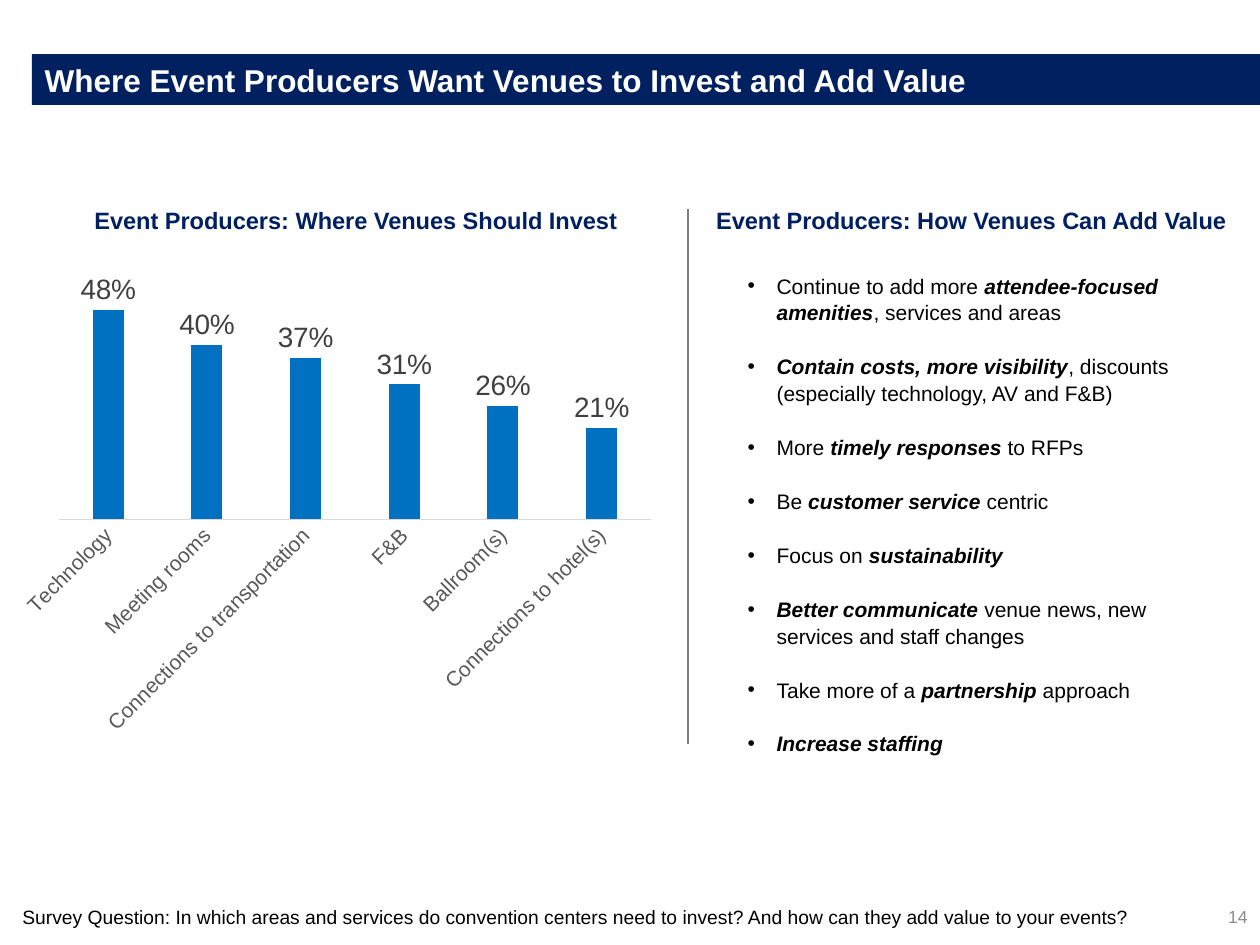
import dataclasses
import lxml.etree
import pptx
import pptx.chart.data
import pptx.dml.color
import pptx.enum.chart
import pptx.enum.shapes
import pptx.enum.text
import pptx.oxml.ns
import pptx.util

SCALE = 914400 / 126
ALIGN = pptx.enum.text.PP_ALIGN
ANCHOR = pptx.enum.text.MSO_ANCHOR


@dataclasses.dataclass(frozen=True)
class Theme:
    """Colours and type sizes of the slide."""
    face: str = "Arial"
    navy: str = "002060"
    white: str = "FFFFFF"
    black: str = "000000"
    blue: str = "0070C0"
    rule: str = "7F7F7F"
    axis: str = "D9D9D9"
    tick: str = "595959"
    label: str = "404040"
    page: str = "8C8C8C"
    title: float = 18
    head: float = 13.5
    body: float = 12
    value: float = 16
    note: float = 11
    foot: float = 10


THEME = Theme()
AREAS = {
    "Technology": 0.48,
    "Meeting rooms": 0.40,
    "Connections to transportation": 0.37,
    "F&B": 0.31,
    "Ballroom(s)": 0.26,
    "Connections to hotel(s)": 0.21,
}
POINTS = [
    [("Continue to add more ", False), ("attendee-focused amenities", True),
     (", services and areas", False)],
    [("Contain costs, more visibility", True),
     (", discounts (especially technology, AV and F&B)", False)],
    [("More ", False), ("timely responses ", True), ("to RFPs", False)],
    [("Be ", False), ("customer service ", True), ("centric", False)],
    [("Focus on ", False), ("sustainability", True)],
    [("Better communicate ", True),
     ("venue news, new services and staff changes", False)],
    [("Take more of a ", False), ("partnership ", True), ("approach", False)],
    [("Increase staffing", True)],
]


def px(num):
    """Turn pixels into EMU."""
    return pptx.util.Emu(round(num * SCALE))


def tint(hue):
    """Turn a hex string into a colour."""
    return pptx.dml.color.RGBColor.from_string(hue)


def style(font, size, hue, bold=False, slant=False):
    """Set the face, size, colour and weight of a font."""
    font.name, font.size = THEME.face, pptx.util.Pt(size)
    font.color.rgb = tint(hue)
    font.bold, font.italic = bold, slant


def place(shape, box):
    """Move a shape to a pixel box."""
    shape.left, shape.top, shape.width, shape.height = map(px, box)


def paint(shape, hue):
    """Give a shape a solid fill."""
    shape.fill.solid()
    shape.fill.fore_color.rgb = tint(hue)


def write(shape, text, size, hue, bold=False, align=ALIGN.LEFT,
          anchor=ANCHOR.MIDDLE):
    """Write one line of text as a single run."""
    frame = shape.text_frame
    frame.word_wrap, frame.vertical_anchor = True, anchor
    frame.auto_size = pptx.enum.text.MSO_AUTO_SIZE.NONE
    para = frame.paragraphs[0]
    para.alignment = align
    run = para.add_run()
    run.text = text
    style(run.font, size, hue, bold)


def add_title(slide, box, text):
    """Set the title as a filled band."""
    shape = slide.shapes.title
    place(shape, box)
    paint(shape, THEME.navy)
    write(shape, text, THEME.title, THEME.white, True)


def add_head(slide, box, text, align):
    """Add a heading over one half of the slide."""
    shape = slide.shapes.add_shape(
        pptx.enum.shapes.MSO_SHAPE.RECTANGLE, *map(px, box))
    shape.shadow.inherit = False
    paint(shape, THEME.white)
    shape.line.fill.background()
    write(shape, text, THEME.head, THEME.navy, True, align)


def add_note(slide, box, text, size, hue, align, anchor):
    """Add a small text box."""
    shape = slide.shapes.add_textbox(*map(px, box))
    write(shape, text, size, hue, False, align, anchor)


def add_list(slide, box, points):
    """Fill the body with bullets that mix plain and strong runs."""
    shape = slide.placeholders[1]
    place(shape, box)
    frame = shape.text_frame
    frame.auto_size = pptx.enum.text.MSO_AUTO_SIZE.NONE
    for num, parts in enumerate(points):
        para = frame.add_paragraph() if num else frame.paragraphs[0]
        para.line_spacing = 1.07
        para.space_before = pptx.util.Pt(0)
        para.space_after = pptx.util.Pt(15.4)
        props = para._p.get_or_add_pPr()
        props.set("marL", str(px(29)))
        props.set("indent", str(px(-29)))
        mark = lxml.etree.SubElement(props, pptx.oxml.ns.qn("a:buChar"))
        mark.set("char", "•")
        for text, strong in parts:
            run = para.add_run()
            run.text = text
            style(run.font, THEME.body, THEME.black, strong, strong)


def add_rule(slide, left, top, low):
    """Add the upright line between the halves."""
    line = slide.shapes.add_connector(
        pptx.enum.shapes.MSO_CONNECTOR.STRAIGHT,
        px(left), px(top), px(left), px(low))
    line.line.color.rgb = tint(THEME.rule)
    line.line.width = pptx.util.Pt(0.75)
    lxml.etree.SubElement(
        line._element.spPr, pptx.oxml.ns.qn("a:effectLst"))


def add_bars(slide, box, areas):
    """Add the column chart with slanted names and value labels."""
    data = pptx.chart.data.CategoryChartData(number_format="0%")
    data.categories = list(areas)
    data.add_series("Series 1", list(areas.values()))
    kind = pptx.enum.chart.XL_CHART_TYPE.COLUMN_CLUSTERED
    chart = slide.shapes.add_chart(kind, *map(px, box), data).chart
    chart.has_legend = chart.has_title = False
    style(chart.font, THEME.foot, THEME.black)

    axis = chart.value_axis
    axis.visible = axis.has_major_gridlines = False
    axis.minimum_scale = 0
    axis = chart.category_axis
    axis.major_tick_mark = pptx.enum.chart.XL_TICK_MARK.NONE
    axis.format.line.color.rgb = tint(THEME.axis)
    axis.format.line.width = pptx.util.Pt(0.75)
    style(axis.tick_labels.font, THEME.body, THEME.tick)
    text = axis._element.find(pptx.oxml.ns.qn("c:txPr"))
    text.find(pptx.oxml.ns.qn("a:bodyPr")).set("rot", "-2700000")

    plot = chart.plots[0]
    plot.gap_width, plot.overlap = 219, -27
    plot.vary_by_categories = False
    paint(plot.series[0].format, THEME.blue)
    plot.has_data_labels = True
    labels = plot.data_labels
    labels.show_value = True
    labels.number_format, labels.number_format_is_linked = "0%", False
    labels.position = pptx.enum.chart.XL_LABEL_POSITION.OUTSIDE_END
    style(labels.font, THEME.value, THEME.label)


def main():
    """Build and save the slide."""
    deck = pptx.Presentation()
    deck.slide_width, deck.slide_height = px(1260), px(945)
    slide = deck.slides.add_slide(deck.slide_layouts[1])
    add_note(slide, (966, 892, 294, 50), "14", THEME.foot, THEME.page,
             ALIGN.RIGHT, ANCHOR.MIDDLE)
    add_note(slide, (10, 899, 1207, 35),
             "Survey Question: In which areas and services do convention "
             "centers need to invest? And how can they add value to your "
             "events?", THEME.note, THEME.black, ALIGN.LEFT, ANCHOR.TOP)
    add_title(slide, (32, 54, 1228, 51),
              "Where Event Producers Want Venues to Invest and Add Value")
    add_bars(slide, (10, 248, 654, 496), AREAS)
    add_head(slide, (82, 199, 559, 42),
             "Event Producers: Where Venues Should Invest", ALIGN.LEFT)
    add_rule(slide, 688, 209, 744)
    add_head(slide, (703, 199, 543, 42),
             "Event Producers: How Venues Can Add Value ", ALIGN.CENTER)
    add_list(slide, (735, 265, 504, 501), POINTS)
    deck.save("out.pptx")


if __name__ == "__main__":
    main()
